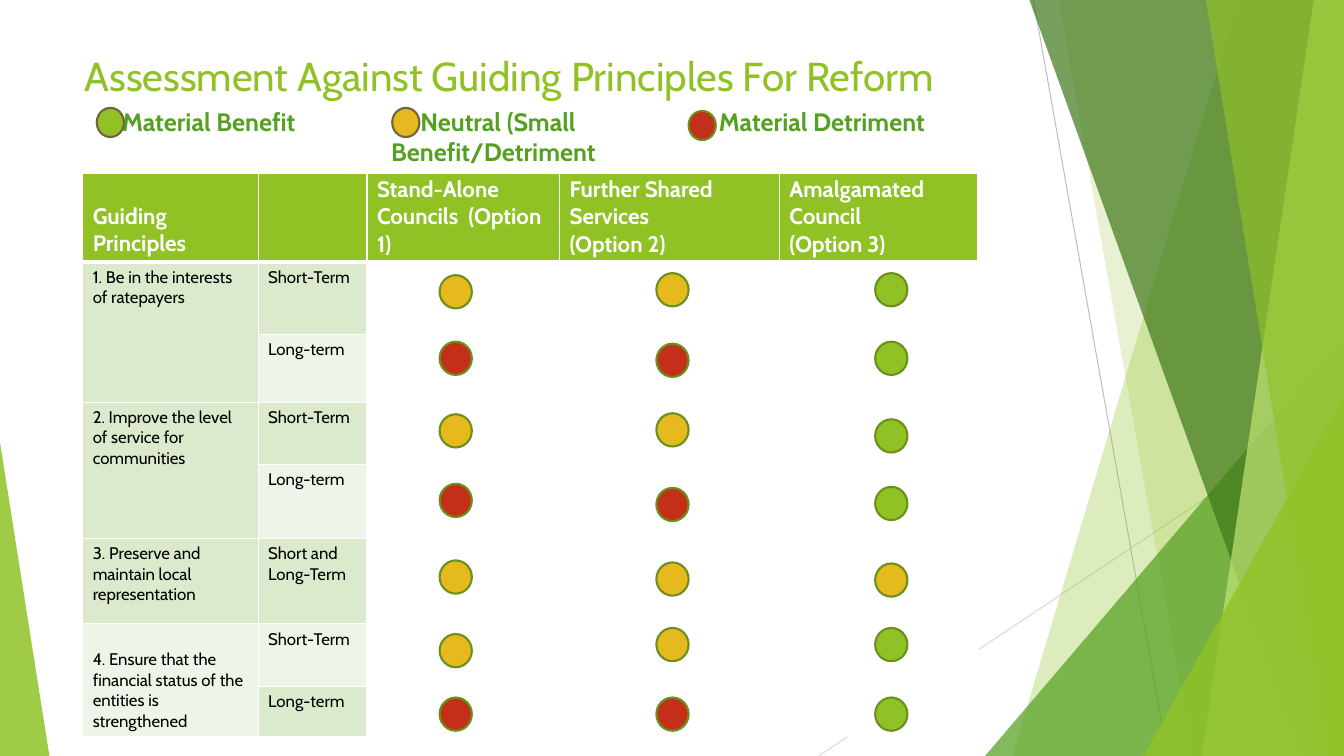
from pptx import Presentation
from pptx import util as u
from pptx.dml.color import RGBColor
from pptx.enum import shapes, text
from pptx.oxml import ns
from lxml import etree


class Theme:
    font = "Cabin"
    title, legend, head, body = 28.8, 18, 16, 12
    white, black = "FFFFFF", "000000"
    lime, green, forest, pale = "90C226", "54A021", "3F7819", "C0E474"
    amber, red = "E6B91E", "C42F1A"
    rim, olive = "6B901C", "6D6540"
    tint, mist = "DBE9CD", "EEF4E8"
    gray, silver = "BFBFBF", "D9D9D9"


def style(frame, size, color, bold=False):
    for par in frame.paragraphs:
        for run in par.runs:
            run.font.name = Theme.font
            run.font.size = u.Pt(size)
            run.font.bold = bold
            run.font.color.rgb = RGBColor.from_string(color)


def paint(cell, fill, base=1):
    """Give a cell white borders, with base as the bottom width, and a fill."""
    props = cell._tc.get_or_add_tcPr()
    for side, width in zip("LRTB", (1, 1, 1, base)):
        edge = etree.SubElement(props, ns.qn(f"a:ln{side}"), w=str(u.Pt(width)))
        solid = etree.SubElement(edge, ns.qn("a:solidFill"))
        etree.SubElement(solid, ns.qn("a:srgbClr"), val=Theme.white)
    cell.fill.solid()
    cell.fill.fore_color.rgb = RGBColor.from_string(fill)


deck = Presentation()
deck.slide_width, deck.slide_height = u.Inches(13.33), u.Inches(7.5)
slide = deck.slides.add_slide(deck.slide_layouts[6])
items = slide.shapes

# Backdrop lines
for x1, y1, x2, y2, color in [
    (10.25, 0, 11.58, 7.5, Theme.gray),
    (13.33, 4.03, 8.12, 7.5, Theme.silver),
]:
    line = items.add_connector(
        shapes.MSO_CONNECTOR.STRAIGHT, *map(u.Inches, (x1, y1, x2, y2)))
    line.line.color.rgb = RGBColor.from_string(color)
    line.line.width = u.Pt(0.75)
    etree.SubElement(line._element.spPr, ns.qn("a:effectLst"))

# Backdrop facets: outline, colour, opacity in percent
right, foot = 13.33, 7.5
facets = [
    ([(12.28, 0), (right, 0), (right, foot), (10.04, foot)], Theme.lime, 30),
    ([(10.5, 0), (right, 0), (right, foot), (11.83, foot)], Theme.lime, 20),
    ([(right, 3.33), (right, foot), (9.77, foot)], Theme.green, 72),
    ([(10.21, 0), (right, 0), (right, foot), (12.91, foot)], Theme.forest, 70),
    ([(13.03, 0), (right, 0), (right, foot), (11.92, foot)], Theme.pale, 70),
    ([(11.96, 0), (right, 0), (right, foot), (13.18, foot)], Theme.lime, 65),
    ([(right, 3.93), (right, foot), (11.34, foot)], Theme.lime, 80),
    ([(0, 4.39), (0.49, foot), (0, foot)], Theme.lime, 85),
]
for points, color, alpha in facets:
    start, *rest = [(u.Inches(x), u.Inches(y)) for x, y in points]
    pen = items.build_freeform(*start)
    pen.add_line_segments(rest)
    facet = pen.convert_to_shape()
    facet.shadow.inherit = False
    facet.line.fill.background()
    facet.fill.solid()
    facet.fill.fore_color.rgb = RGBColor.from_string(color)
    tone = facet._element.spPr.find(".//" + ns.qn("a:srgbClr"))
    etree.SubElement(tone, ns.qn("a:alpha"), val=str(alpha * 1000))

# Title
title = items.add_textbox(*map(u.Inches, (0.74, 0.46, 9.4, 1.65))).text_frame
title.word_wrap = True
title.text = "Assessment Against Guiding Principles For Reform"
style(title, Theme.title, Theme.lime)

# Principles table
widths = [1.74, 1.08, 1.91, 2.18, 1.97]
heights = [0.9, 0.72, 0.67, 0.62, 0.73, 0.85, 0.62, 0.5]
heads = ["Guiding Principles", "", "Stand-Alone Councils  (Option 1)",
         "Further Shared Services\n(Option 2)", "Amalgamated Council\n(Option 3)"]
rows = [
    ("1. Be in the interests of ratepayers", "Short-Term", Theme.tint),
    ("", "Long-term", Theme.mist),
    ("2. Improve the level of service for communities", "Short-Term", Theme.tint),
    ("", "Long-term", Theme.mist),
    ("3. Preserve and maintain local representation", "Short and Long-Term", Theme.tint),
    ("4. Ensure that the financial status of the entities is strengthened",
     "Short-Term", Theme.mist),
    ("", "Long-term", Theme.tint),
]
grid = items.add_table(
    len(heights), len(widths),
    *map(u.Inches, (0.82, 1.7, sum(widths), sum(heights)))).table
grid.first_row = grid.horz_banding = False
for col, width in zip(grid.columns, widths):
    col.width = u.Inches(width)
for row, height in zip(grid.rows, heights):
    row.height = u.Inches(height)
for c, label in enumerate(heads):
    cell = grid.cell(0, c)
    cell.text_frame.text = label
    style(cell.text_frame, Theme.head, Theme.white, True)
    paint(cell, Theme.lime, 3)
for r, (rule, term, shade) in enumerate(rows, 1):
    for c, label in enumerate((rule, term, "", "", "")):
        cell = grid.cell(r, c)
        cell.text_frame.text = label
        style(cell.text_frame, Theme.body, Theme.black)
        paint(cell, shade if c < 2 else Theme.white)
for top in (1, 3, 6):
    grid.cell(top, 0).merge(grid.cell(top + 1, 0))
for r in (0, 6):
    grid.cell(r, 0).vertical_anchor = text.MSO_ANCHOR.BOTTOM

# Legend
labels = ["Material Benefit", "Neutral (Small Benefit/Detriment", "Material Detriment"]
key = items.add_table(1, 3, *map(u.Inches, (0.82, 1.01, 8.88, 0.7))).table
key.first_row = key.horz_banding = False
for c, label in enumerate(labels):
    cell = key.cell(0, c)
    cell.text_frame.text = label
    props = cell.text_frame.paragraphs[0]._p.get_or_add_pPr()
    props.set("indent", str(u.Inches(0.29)))
    style(cell.text_frame, Theme.legend, Theme.green, True)
    paint(cell, Theme.white, 3)

# Rating dots: left, top, width, height, fill, rim
dots = [
    (0.96, 1.07, 0.27, 0.29, Theme.lime, Theme.olive),
    (3.89, 1.07, 0.27, 0.29, Theme.amber, Theme.olive),
    (6.83, 1.1, 0.27, 0.29, Theme.red, Theme.rim),
]
ratings = [
    ("AAG", (2.73, 2.71, 2.71)),
    ("RRG", (3.39, 3.41, 3.39)),
    ("AAG", (4.11, 4.1, 4.16)),
    ("RRG", (4.8, 4.84, 4.83)),
    ("AAA", (5.56, 5.58, 5.59)),
    ("AAG", (6.29, 6.23, 6.23)),
    ("RRG", (6.92, 6.92, 6.92)),
]
fills = {"G": Theme.lime, "A": Theme.amber, "R": Theme.red}
for marks, tops in ratings:
    for mark, left, top in zip(marks, (4.36, 6.51, 8.68), tops):
        dots.append((left, top, 0.32, 0.33, fills[mark], Theme.rim))
for *box, fill, rim in dots:
    dot = items.add_shape(shapes.MSO_SHAPE.OVAL, *map(u.Inches, box))
    dot.shadow.inherit = False
    dot.fill.solid()
    dot.fill.fore_color.rgb = RGBColor.from_string(fill)
    dot.line.color.rgb = RGBColor.from_string(rim)
    dot.line.width = u.Pt(1.5)

deck.save("out.pptx")
